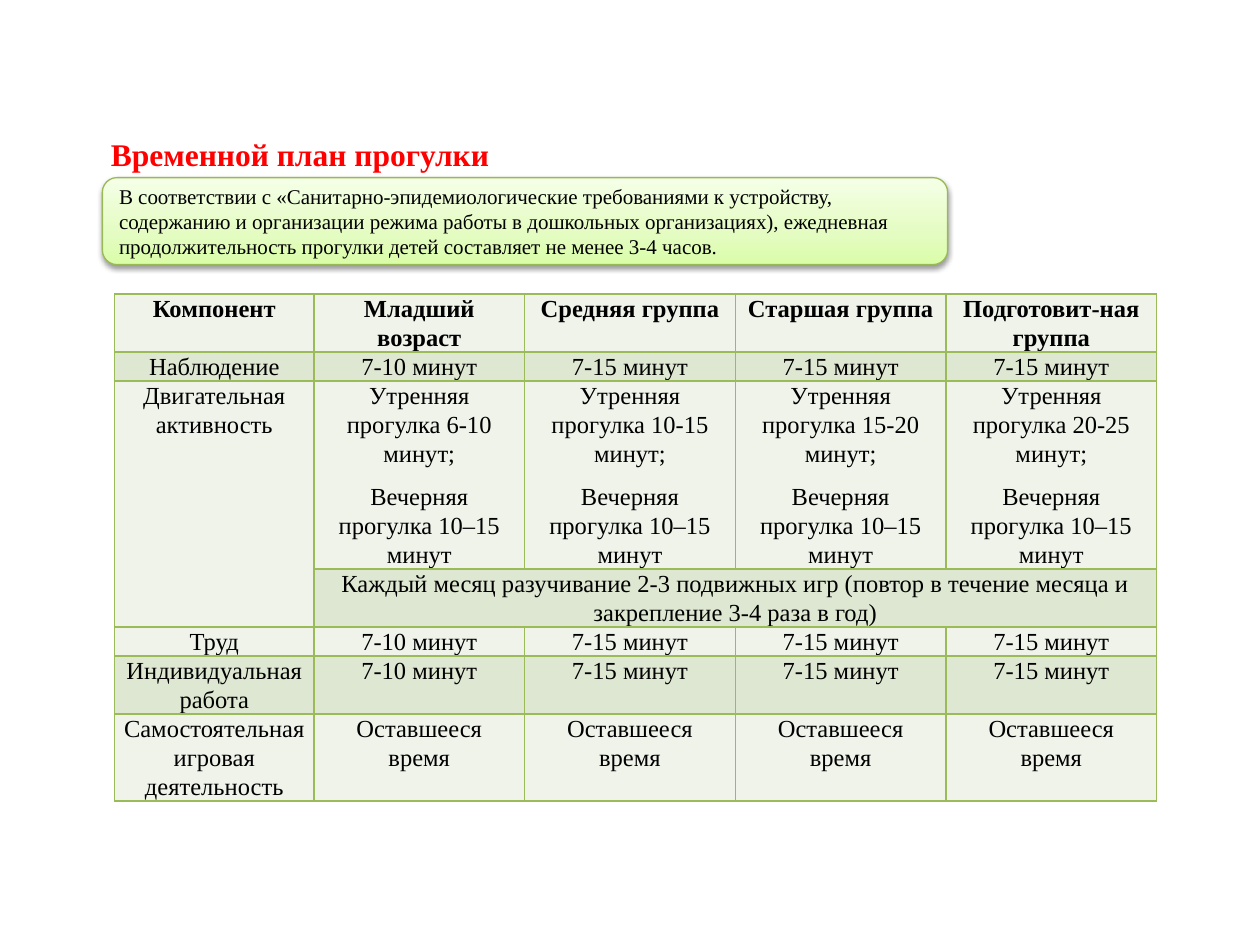
import pptx
import pptx.util
import pptx.dml.color
import pptx.enum.shapes
import pptx.enum.text
import pptx.oxml
import pptx.oxml.ns

Pt = pptx.util.Pt
ALIGN = pptx.enum.text.PP_ALIGN
ANCHOR = pptx.enum.text.MSO_ANCHOR
FONT = "Times New Roman"
COLORS = {
    "title": "FF0000", "text": "000000", "light": "EFF3EA", "dark": "DEE7D1",
    "grid": "9BBB59", "edge": "98B955", "low": "DAFDA7", "mid": "E4FCC2",
    "high": "F5FFE7",
}

TITLE = "Временной план прогулки"
NOTE = (
    "В соответствии с «Санитарно-эпидемиологические требованиями к устройству, "
    "содержанию и организации режима работы в дошкольных организациях), ежедневная "
    "продолжительность прогулки детей составляет не менее 3-4 часов."
)
TIMES = ["7-10 минут"] + ["7-15 минут"] * 3
WALKS = [
    f"Утренняя прогулка {span} минут;\nВечерняя прогулка 10–15 минут"
    for span in ("6-10", "10-15", "15-20", "20-25")
]
GAMES = (
    "Каждый месяц разучивание 2-3 подвижных игр "
    "(повтор в течение месяца и закрепление 3-4 раза в год)"
)
ROWS = [
    ["Компонент", "Младший возраст", "Средняя группа", "Старшая группа",
     "Подготовит-ная группа"],
    ["Наблюдение"] + TIMES,
    ["Двигательная активность"] + WALKS,
    ["", GAMES, "", "", ""],
    ["Труд"] + TIMES,
    ["Индивидуальная работа"] + TIMES,
    ["Самостоятельная игровая деятельность"] + ["Оставшееся время"] * 4,
]
WIDTHS = [113.9] + [120.4] * 4
HEIGHTS = [32, 15, 83, 32, 15, 32, 48]


def color(name):
    return pptx.dml.color.RGBColor.from_string(COLORS[name])


def parse(xml):
    space = pptx.oxml.ns.nsdecls("a")
    return pptx.oxml.parse_xml(xml.replace(">", f" {space}>", 1))


def style(para, size, name="text", bold=False):
    for run in para.runs:
        font = run.font
        font.name, font.size, font.bold = FONT, Pt(size), bold
        font.color.rgb = color(name)


def add_title(slide, left, top, width, height):
    title = slide.shapes.title
    title.left, title.top = Pt(left), Pt(top)
    title.width, title.height = Pt(width), Pt(height)
    frame = title.text_frame
    frame.text = TITLE
    frame.auto_size = pptx.enum.text.MSO_AUTO_SIZE.NONE
    frame.vertical_anchor = ANCHOR.TOP
    para = frame.paragraphs[0]
    para.alignment = ALIGN.LEFT
    style(para, 18, "title", True)


def add_note(slide, left, top, width, height):
    kind = pptx.enum.shapes.MSO_SHAPE.FLOWCHART_ALTERNATE_PROCESS
    note = slide.shapes.add_shape(kind, Pt(left), Pt(top), Pt(width), Pt(height))
    note.line.color.rgb = color("edge")
    note.line.width = Pt(0.75)
    stops = "".join(
        f'<a:gs pos="{pos}"><a:srgbClr val="{COLORS[name]}"/></a:gs>'
        for pos, name in ((0, "low"), (35000, "mid"), (100000, "high"))
    )
    props = note.element.spPr
    props.insert(2, parse(
        f'<a:gradFill rotWithShape="1"><a:gsLst>{stops}</a:gsLst>'
        '<a:lin ang="16200000" scaled="1"/></a:gradFill>'
    ))
    props.append(parse(
        f'<a:effectLst><a:outerShdw blurRad="{Pt(3.1)}" dist="{Pt(1.6)}" '
        'dir="5400000" rotWithShape="0"><a:srgbClr val="000000">'
        '<a:alpha val="38000"/></a:srgbClr></a:outerShdw></a:effectLst>'
    ))
    frame = note.text_frame
    frame.text = NOTE
    frame.word_wrap = True
    frame.vertical_anchor = ANCHOR.MIDDLE
    para = frame.paragraphs[0]
    para.alignment = ALIGN.LEFT
    style(para, 12)


def set_cell(cell, text, fill, bold):
    cell.fill.solid()
    cell.fill.fore_color.rgb = color(fill)
    cell.margin_left = cell.margin_right = Pt(5)
    cell.margin_top = cell.margin_bottom = 0
    props = cell._tc.get_or_add_tcPr()
    for place, side in enumerate("LRTB"):
        props.insert(place, parse(
            f'<a:ln{side} w="{Pt(1)}"><a:solidFill>'
            f'<a:srgbClr val="{COLORS["grid"]}"/></a:solidFill></a:ln{side}>'
        ))
    cell.text_frame.text = text
    for para in cell.text_frame.paragraphs:
        para.alignment = ALIGN.CENTER
        para.line_spacing = 1.07
        para.space_after = Pt(8)
        style(para, 14, bold=bold)


def add_plan(slide, left, top):
    shape = slide.shapes.add_table(
        len(ROWS), len(WIDTHS), Pt(left), Pt(top), Pt(sum(WIDTHS)), Pt(sum(HEIGHTS))
    )
    table = shape.table
    table.first_row = table.horz_banding = False
    for col, width in zip(table.columns, WIDTHS):
        col.width = Pt(width)
    for row, height in zip(table.rows, HEIGHTS):
        row.height = Pt(height)
    for r, row in enumerate(ROWS):
        for c, text in enumerate(row):
            fill = "dark" if r % 2 and (r, c) != (3, 0) else "light"
            set_cell(table.cell(r, c), text, fill, r == 0)
    table.cell(2, 0).merge(table.cell(3, 0))
    table.cell(3, 1).merge(table.cell(3, 4))


def main():
    deck = pptx.Presentation()
    deck.slide_width, deck.slide_height = Pt(720), Pt(540)
    slide = deck.slides.add_slide(deck.slide_layouts[5])
    add_title(slide, 56.2, 73.4, 478, 29)
    add_note(slide, 58.5, 101.5, 483, 49.7)
    add_plan(slide, 65.5, 168)
    deck.save("out.pptx")


if __name__ == "__main__":
    main()
